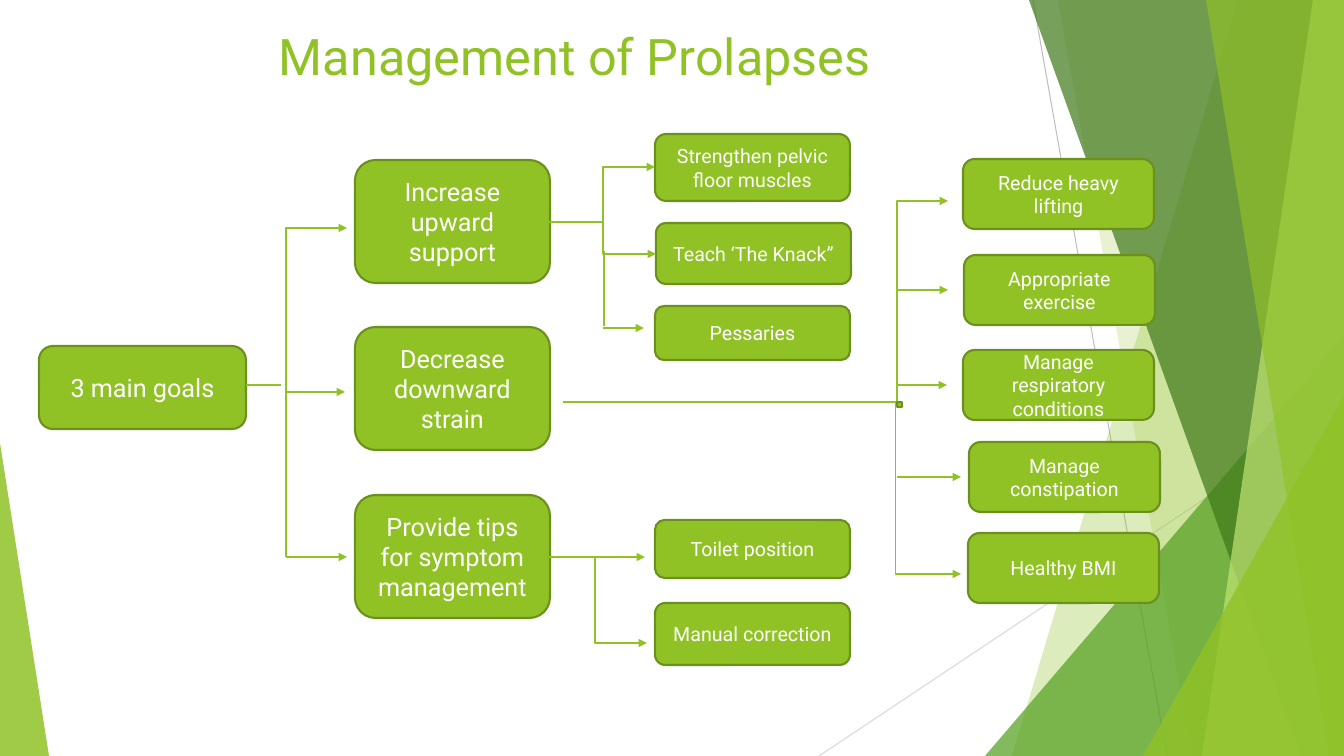
from lxml import etree
from pptx import Presentation, util as u
from pptx.dml.color import RGBColor
from pptx.enum import shapes as sh, text as tx
from pptx.oxml import ns

PX = 914400 / 100.8
WIDTH, HEIGHT = 1344, 756
FONT = "Roboto"
COLOURS = {"lime": "90C226", "edge": "6B901C", "leaf": "54A021", "forest": "3F7819",
           "pale": "C0E474", "grey": "BFBFBF", "light": "D9D9D9", "white": "FFFFFF"}

TITLE = ("Management of Prolapses", (101, 20, 948, 145))
RAYS = [("grey", (1033, 0, 1167, 756)), ("light", (1344, 406, 819, 756))]
BANDS = "band"
FACETS = [
    ("lime", 30, BANDS, (1238, 1012)),
    ("lime", 20, BANDS, (1058, 1192)),
    ("leaf", 72, 1, (985, 336, 359, 420)),
    ("forest", 70, BANDS, (1029, 1301)),
    ("pale", 70, BANDS, (1313, 1202)),
    ("lime", 65, BANDS, (1206, 1329)),
    ("lime", 80, 1, (1143, 396, 201, 360)),
    ("lime", 85, 0, (0, 443, 49, 313)),
]
GROUPS = [
    (18, 207, [("3 main goals", 39, 346, 83)]),
    (18, 195, [("Increase upward support", 355, 160, 123),
               ("Decrease downward strain", 355, 327, 123),
               ("Provide tips for symptom management", 355, 495, 123)]),
    (14, 195, [("Strengthen pelvic floor muscles", 655, 134, 67),
               ("Teach ‘The Knack”", 656, 223, 61),
               ("Pessaries", 655, 306, 54),
               ("Toilet position", 655, 520, 58),
               ("Manual correction", 655, 603, 62)]),
    (14, 191, [("Reduce heavy lifting", 963, 159, 70),
               ("Appropriate exercise", 964, 255, 70),
               ("Manage respiratory conditions", 963, 350, 70),
               ("Manage constipation", 969, 442, 70),
               ("Healthy BMI", 968, 533, 70)]),
]
JUNCTION = (897, 402, 5, 5)
ELBOWS = [
    (286, 310, 347, 228, 286), (286, 251, 345, 392, 286),
    (549, 222, 655, 167, 603), (549, 222, 656, 254, 603),
    (563, 402, 948, 201, 897), (573, 402, 961, 574, 896),
    (595, 557, 647, 643, 595),
]
ARROWS = [(897, 290, 948), (897, 385, 947), (897, 477, 961),
          (549, 557, 645), (286, 557, 347), (603, 328, 644)]
STEMS = [(281, 385, 246, 385), (286, 385, 286, 557), (604, 251, 604, 326)]


def px(*lengths):
    return [round(n * PX) for n in lengths]


def rgb(name):
    return RGBColor.from_string(COLOURS[name])


def write(shape, words, size, colour, anchor):
    frame = shape.text_frame
    frame.word_wrap = True
    frame.vertical_anchor = anchor
    para = frame.paragraphs[0]
    para.alignment = tx.PP_ALIGN.CENTER
    run = para.add_run()
    run.text = words
    run.font.size, run.font.name = u.Pt(size), FONT
    run.font.color.rgb = rgb(colour)


def paint(shape, fill, edge=None, opacity=100):
    shape.shadow.inherit = False
    shape.fill.solid()
    shape.fill.fore_color.rgb = rgb(fill)
    if opacity < 100:
        colour = shape.fill._xPr.find(ns.qn("a:solidFill"))[0]
        etree.SubElement(colour, ns.qn("a:alpha"), val=str(opacity * 1000))
    if edge:
        shape.line.color.rgb = rgb(edge)
        shape.line.width = u.Pt(1.5)
    else:
        shape.line.fill.background()


def link(canvas, x1, y1, x2, y2, bend=None, arrow=False, colour="lime", width=1):
    kind = sh.MSO_CONNECTOR.STRAIGHT if bend is None else sh.MSO_CONNECTOR.ELBOW
    line = canvas.add_connector(kind, *px(x1, y1, x2, y2))
    line.line.color.rgb = rgb(colour)
    line.line.width = u.Pt(width)
    props = line._element.spPr
    if bend is not None:
        guides = props.find(ns.qn("a:prstGeom")).get_or_add_avLst()
        share = round((bend - x1) / (x2 - x1) * 100000)
        etree.SubElement(guides, ns.qn("a:gd"), name="adj1", fmla=f"val {share}")
    if arrow:
        etree.SubElement(props.find(ns.qn("a:ln")), ns.qn("a:tailEnd"), type="triangle")
    etree.SubElement(props, ns.qn("a:effectLst"))


def facet(canvas, colour, opacity, apex, place):
    if apex == BANDS:
        top, bottom = place
        outline = canvas.build_freeform(top, 0, scale=PX)
        outline.add_line_segments([(WIDTH, 0), (WIDTH, HEIGHT), (bottom, HEIGHT)])
        shape = outline.convert_to_shape()
    else:
        shape = canvas.add_shape(sh.MSO_SHAPE.ISOSCELES_TRIANGLE, *px(*place))
        shape.adjustments[0] = apex
    paint(shape, colour, opacity=opacity)


def main():
    deck = Presentation()
    deck.slide_width, deck.slide_height = px(WIDTH, HEIGHT)
    canvas = deck.slides.add_slide(deck.slide_layouts[6]).shapes

    for colour, ends in RAYS:
        link(canvas, *ends, colour=colour, width=0.75)
    for item in FACETS:
        facet(canvas, *item)

    heading, place = TITLE
    write(canvas.add_textbox(*px(*place)), heading, size=36, colour="lime",
          anchor=tx.MSO_ANCHOR.TOP)

    for size, width, steps in GROUPS:
        for words, left, top, height in steps:
            step = canvas.add_shape(sh.MSO_SHAPE.ROUNDED_RECTANGLE,
                                    *px(left, top, width, height))
            paint(step, "lime", "edge")
            write(step, words, size=size, colour="white", anchor=tx.MSO_ANCHOR.MIDDLE)

    for elbow in ELBOWS:
        link(canvas, *elbow, arrow=True)
    paint(canvas.add_shape(sh.MSO_SHAPE.RECTANGLE, *px(*JUNCTION)), "lime", "edge")
    for start, y, end in ARROWS:
        link(canvas, start, y, end, y, arrow=True)
    for stem in STEMS:
        link(canvas, *stem)

    deck.save("out.pptx")


if __name__ == "__main__":
    main()
